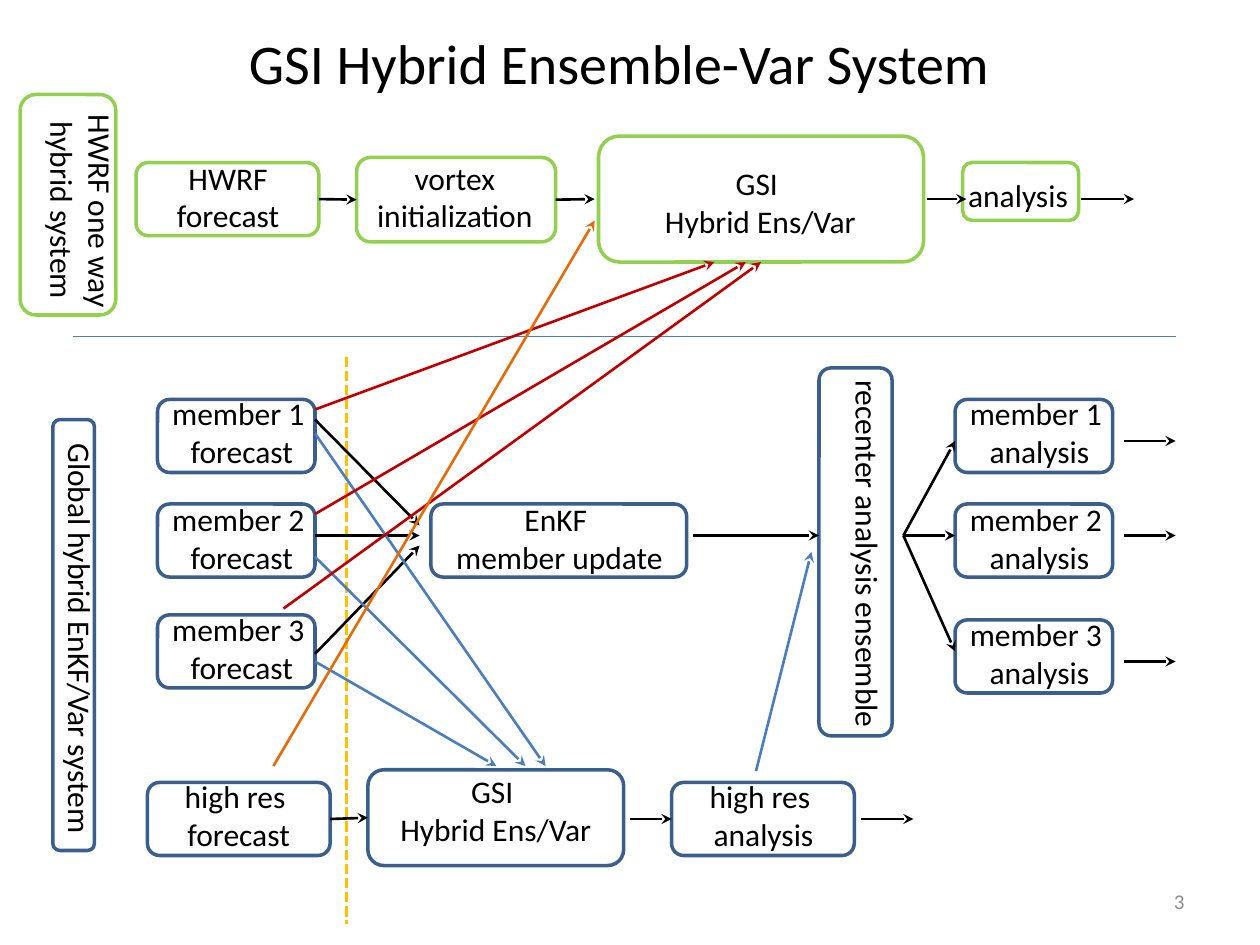
from dataclasses import dataclass

from pptx import Presentation
from pptx.dml.color import RGBColor
from pptx.enum.dml import MSO_LINE
from pptx.enum.shapes import MSO_CONNECTOR, MSO_SHAPE
from pptx.enum.text import MSO_ANCHOR, MSO_AUTO_SIZE, PP_ALIGN
from pptx.oxml.ns import qn
from pptx.util import Inches, Pt
from lxml.etree import SubElement

COLUMNS_PER_INCH = 12
RIGHT, LEFT = 3, 1


@dataclass(frozen=True)
class Theme:
    """Colours, type sizes and line widths of the slide."""
    font: str = "Calibri"
    title: int = 32
    body: int = 18
    footer: int = 12
    outline: float = 2
    arrow: float = 1.5
    rule: float = 0.75
    ink: str = "000000"
    muted: str = "8C8C8C"
    regional: str = "92D050"
    global_: str = "3A5F8C"
    blue: str = "4B7EBC"
    red: str = "C00000"
    orange: str = "E46C0A"
    gold: str = "FFC000"


THEME = Theme()


def grid(*cells):
    """Turn grid columns and rows into slide lengths."""
    return [Inches(round(cell / COLUMNS_PER_INCH, 2)) for cell in cells]


def write(frame, text, size=THEME.body, color=THEME.ink, align=PP_ALIGN.CENTER,
          anchor=MSO_ANCHOR.TOP, wrap=False, grow=True, vertical=False):
    """Fill a text frame with one paragraph per line of text."""
    frame.word_wrap = wrap
    frame.auto_size = MSO_AUTO_SIZE.SHAPE_TO_FIT_TEXT if grow else MSO_AUTO_SIZE.NONE
    frame.vertical_anchor = anchor
    for index, line in enumerate(text.split("\n")):
        paragraph = frame.add_paragraph() if index else frame.paragraphs[0]
        paragraph.alignment = align
        run = paragraph.add_run()
        run.text = line
        run.font.size = Pt(size)
        run.font.name = THEME.font
        run.font.color.rgb = RGBColor.from_string(color)
    if vertical:
        frame._txBody.find(qn("a:bodyPr")).set("vert", "vert")


def add_label(slide, area, text, **style):
    """Add a text box over an area of the grid."""
    label = slide.shapes.add_textbox(*grid(*area))
    write(label.text_frame, text, **style)


def add_node(slide, area, label_area, text, color, **style):
    """Add a rounded outline with its label and return the outline."""
    node = slide.shapes.add_shape(MSO_SHAPE.ROUNDED_RECTANGLE, *grid(*area))
    node.shadow.inherit = False
    node.fill.background()
    node.line.color.rgb = RGBColor.from_string(color)
    node.line.width = Pt(THEME.outline)
    add_label(slide, label_area, text, **style)
    return node


def add_line(slide, start, end, color=THEME.ink, width=THEME.arrow, dash=None):
    """Add a plain straight line between two grid points."""
    line = slide.shapes.add_connector(MSO_CONNECTOR.STRAIGHT, *grid(*start, *end))
    line.line.color.rgb = RGBColor.from_string(color)
    line.line.width = Pt(width)
    if dash:
        line.line.dash_style = dash
    SubElement(line.element.spPr, qn("a:effectLst"))
    return line


def add_arrow(slide, start, end, color=THEME.ink, source=None, target=None):
    """Add an arrow, joined to the side of a source or target node if given."""
    arrow = add_line(slide, start, end, color)
    if source is not None:
        arrow.begin_connect(source, RIGHT)
    if target is not None:
        arrow.end_connect(target, LEFT)
    SubElement(arrow.element.spPr.find(qn("a:ln")), qn("a:tailEnd"), type="stealth")


def add_members(slide):
    """Add the ensemble members, their update and their analyses."""
    for number, (forecast_row, analysis_row) in enumerate([(38, 38), (48, 48), (58.5, 59)], 1):
        for column, row, stage in ((15, forecast_row, "forecast"), (91, analysis_row, "analysis")):
            add_node(slide, (column, row, 15, 7), (column, row - 1, 16.1, 8.5),
                     f"member {number} \n{stage}", THEME.global_)
    add_node(slide, (41, 48, 24.4, 7), (42, 47, 22.5, 8.5), "EnKF \nmember update", THEME.global_)
    add_node(slide, (78, 35, 7, 35), (79, 35, 6.1, 37), "recenter analysis ensemble",
             THEME.global_, align=PP_ALIGN.LEFT, wrap=True, vertical=True)
    for start_row, end_row in ((40, 50), (51, 51), (62.3, 52)):
        add_arrow(slide, (30, start_row), (40, end_row))
    add_arrow(slide, (66, 51), (78, 51))
    for analysis_row, exit_row in ((42, 42), (51, 51), (62, 63)):
        add_arrow(slide, (86, 51), (91, analysis_row))
        add_arrow(slide, (107, exit_row), (112, exit_row))


def add_high_res(slide):
    """Add the high resolution chain along the bottom."""
    forecast = add_node(slide, (14, 74.5, 17.4, 7), (16.3, 73.5, 12.8, 8.5),
                        "high res \nforecast", THEME.global_)
    hybrid = add_node(slide, (35, 73.3, 24.4, 9.1), (36.8, 73, 20.8, 11),
                      "GSI \nHybrid Ens/Var", THEME.global_)
    analysis = add_node(slide, (64, 74.5, 17.4, 7), (66.1, 73.5, 13.2, 8.5),
                        "high res \nanalysis", THEME.global_)
    add_arrow(slide, (31.4, 78), (35, 78), source=forecast, target=hybrid)
    add_arrow(slide, (60, 78), (64, 78), target=analysis)
    add_arrow(slide, (82, 78), (87, 78))


def add_regional(slide):
    """Add the one way regional chain along the top."""
    forecast = add_node(slide, (13, 15.5, 17.4, 7), (15.6, 14.5, 12.2, 8.5),
                        "HWRF\nforecast", THEME.regional)
    vortex = add_node(slide, (34, 15, 19, 8), (34, 14.5, 18.7, 8.5),
                      "vortex\ninitialization", THEME.regional, wrap=True)
    add_node(slide, (57, 13, 31, 12), (62, 15, 20.8, 11), "GSI \nHybrid Ens/Var", THEME.regional)
    add_node(slide, (91.7, 15.5, 11, 5.5), (91, 16.2, 12, 4.8), "analysis", THEME.regional)
    add_arrow(slide, (30.4, 19), (34, 19), source=forecast, target=vortex)
    add_arrow(slide, (53, 19), (56.6, 19), source=vortex)
    add_arrow(slide, (88.3, 19), (92, 19))
    add_arrow(slide, (103, 19), (108, 19))


def add_exchanges(slide):
    """Add the coloured arrows that pass data between the chains."""
    exchanges = {
        THEME.blue: [((72, 73.5), (77.3, 52.5)), ((30, 41.3), (52, 73)),
                     ((30, 53), (50, 73)), ((30, 63), (47.3, 73))],
        THEME.red: [((30, 39), (68, 25)), ((30, 49), (71, 25)), ((27, 58), (72.5, 25))],
        THEME.orange: [((26, 73), (56.6, 21))],
    }
    for color, routes in exchanges.items():
        for start, end in routes:
            add_arrow(slide, start, end, color)


def add_system_names(slide):
    """Add the vertical names of the two systems at the left edge."""
    style = dict(align=PP_ALIGN.LEFT, wrap=True, vertical=True)
    add_node(slide, (5, 40, 4, 41), (4, 41, 6.1, 40), "Global hybrid EnKF/Var system",
             THEME.global_, **style)
    add_node(slide, (1.9, 9, 9.1, 21), (2.3, 9.7, 9.7, 27.4), "HWRF one way\n hybrid system",
             THEME.regional, **style)


def main():
    """Build the slide and save it."""
    deck = Presentation()
    deck.slide_width, deck.slide_height = Inches(10), Inches(7.5)
    slide = deck.slides.add_slide(deck.slide_layouts[5])
    title = slide.shapes.title
    title.left, title.top, title.width, title.height = grid(6, 1, 106, 10)
    write(title.text_frame, "GSI Hybrid Ensemble-Var System", size=THEME.title,
          anchor=MSO_ANCHOR.MIDDLE, wrap=True, grow=False)
    add_line(slide, (33, 34), (33, 88), THEME.gold, THEME.outline, MSO_LINE.SQUARE_DOT)
    add_members(slide)
    add_high_res(slide)
    add_line(slide, (7, 32), (112, 32), THEME.blue, THEME.rule)
    add_regional(slide)
    add_exchanges(slide)
    add_system_names(slide)
    add_label(slide, (86, 83.4, 28, 4.8), "3", size=THEME.footer, color=THEME.muted,
              align=PP_ALIGN.RIGHT, anchor=MSO_ANCHOR.MIDDLE, wrap=True, grow=False)
    deck.save("out.pptx")


if __name__ == "__main__":
    main()
